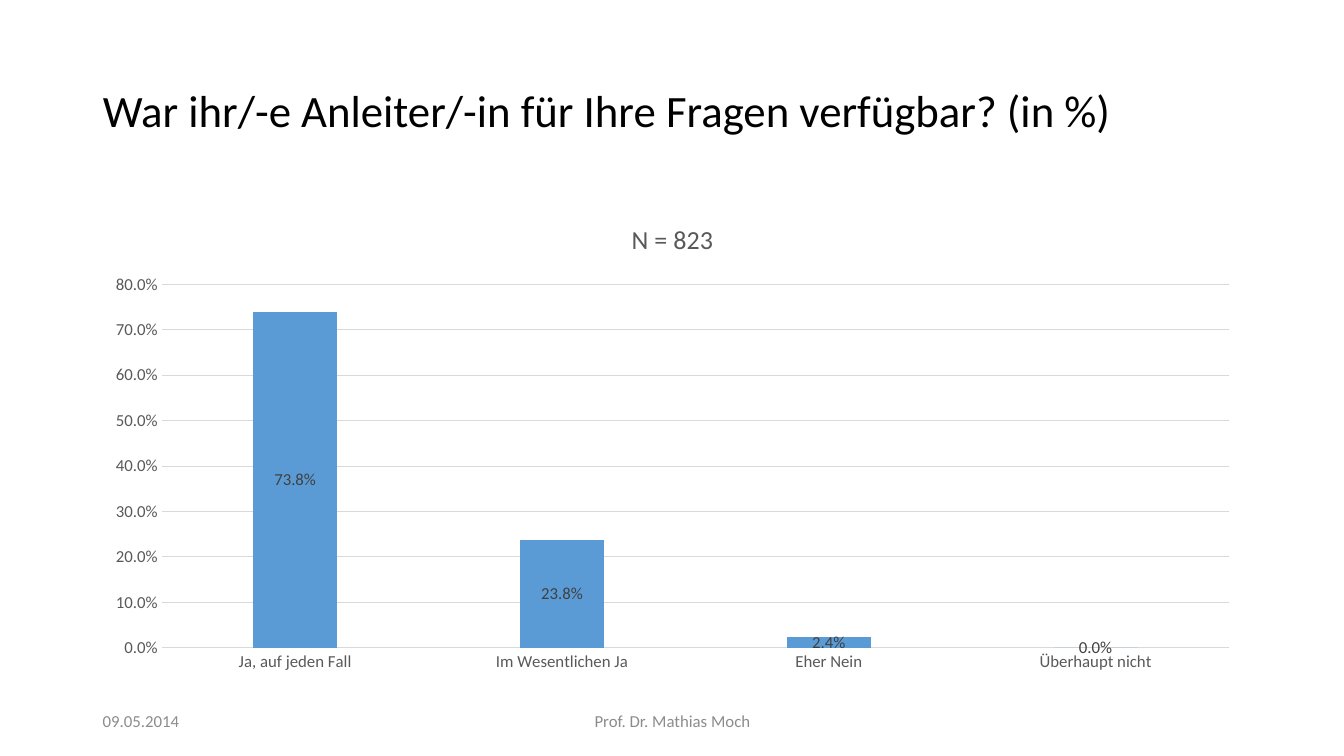
import pptx
import pptx.util
import pptx.dml.color
import pptx.chart.data
import pptx.enum.chart
import pptx.enum.text

Inches, Pt = pptx.util.Inches, pptx.util.Pt
ALIGN = pptx.enum.text.PP_ALIGN
MIDDLE = pptx.enum.text.MSO_ANCHOR.MIDDLE
GRAY, GRID = "595959", "D9D9D9"


def color(code):
    return pptx.dml.color.RGBColor.from_string(code)


def style(font, size, code):
    font.name = "Calibri"
    font.size = Pt(size)
    font.bold = False
    font.color.rgb = color(code)


deck = pptx.Presentation()
deck.slide_width, deck.slide_height = Inches(13.33), Inches(7.5)
slide = deck.slides.add_slide(deck.slide_layouts[5])

# Title
title = slide.shapes.title
title.left, title.top = Inches(0.92), Inches(0.4)
title.width, title.height = Inches(11.5), Inches(1.45)
title.text_frame.text = "War ihr/-e Anleiter/-in für Ihre Fragen verfügbar? (in %)"
title.text_frame.vertical_anchor = MIDDLE
head = title.text_frame.paragraphs[0]
head.alignment = ALIGN.LEFT
head.line_spacing = 0.9
style(head.font, 32, "000000")

# Chart
data = pptx.chart.data.CategoryChartData(number_format="0.0%")
data.categories = ["Ja, auf jeden Fall", "Im Wesentlichen Ja", "Eher Nein", "Überhaupt nicht"]
data.add_series("Series 1", [0.738, 0.238, 0.024, 0])
chart = slide.shapes.add_chart(
    pptx.enum.chart.XL_CHART_TYPE.COLUMN_CLUSTERED,
    Inches(0.92), Inches(2), Inches(11.5), Inches(4.76), data).chart
style(chart.font, 10, "000000")
chart.has_legend = False
chart.has_title = True
chart.chart_title.text_frame.text = "N = 823"
chart.chart_title.include_in_layout = False
style(chart.chart_title.text_frame.paragraphs[0].font, 18.6, GRAY)

# Axes
for axis in (chart.category_axis, chart.value_axis):
    axis.major_tick_mark = pptx.enum.chart.XL_TICK_MARK.NONE
    axis.minor_tick_mark = pptx.enum.chart.XL_TICK_MARK.NONE
    style(axis.tick_labels.font, 12, GRAY)
values = chart.value_axis
values.minimum_scale, values.maximum_scale, values.major_unit = 0, 0.8, 0.1
values.tick_labels.number_format = "0.0%"
values.tick_labels.number_format_is_linked = False
values.format.line.fill.background()
values.has_major_gridlines = True
for line in (chart.category_axis.format.line, values.major_gridlines.format.line):
    line.color.rgb = color(GRID)
    line.width = Pt(0.75)

# Columns and labels
plot = chart.plots[0]
plot.gap_width, plot.overlap = 219, -27
plot.vary_by_categories = False
bars = plot.series[0]
bars.format.fill.solid()
bars.format.fill.fore_color.rgb = color("5B9BD5")
labels = bars.data_labels
labels.show_value = True
labels.number_format = "0.0%"
labels.number_format_is_linked = False
labels.position = pptx.enum.chart.XL_LABEL_POSITION.CENTER
style(labels.font, 12, "404040")

# Footer
for left, width, text, align in (
        (0.92, 3, "09.05.2014", ALIGN.LEFT),
        (4.42, 4.5, "Prof. Dr. Mathias Moch", ALIGN.CENTER)):
    box = slide.shapes.add_textbox(Inches(left), Inches(6.95), Inches(width), Inches(0.4))
    frame = box.text_frame
    frame.word_wrap = True
    frame.vertical_anchor = MIDDLE
    frame.text = text
    frame.paragraphs[0].alignment = align
    style(frame.paragraphs[0].font, 12, "8C8C8C")

deck.save("out.pptx")
